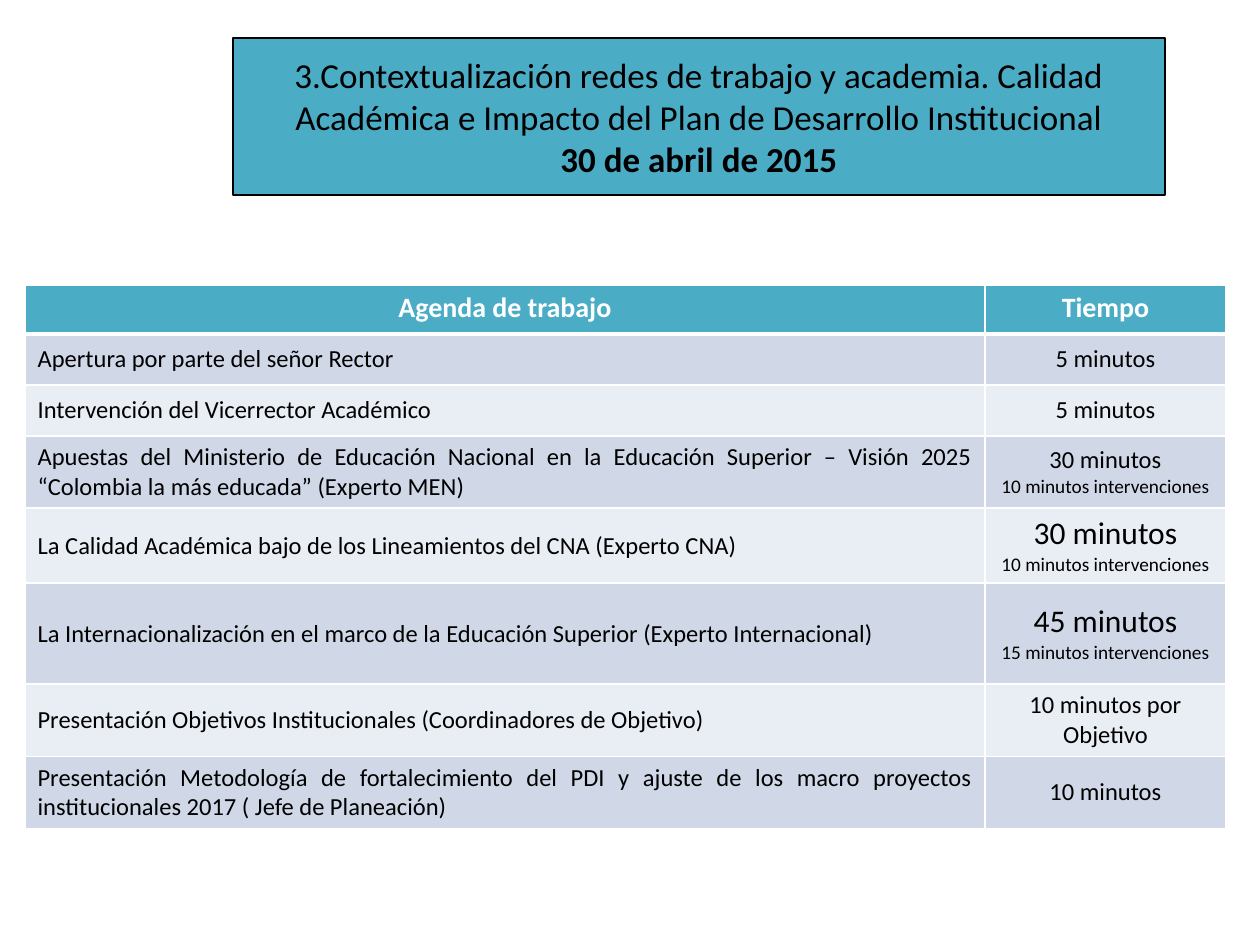
from lxml import etree
from pptx import Presentation
from pptx.dml.color import RGBColor
from pptx.enum.shapes import MSO_SHAPE
from pptx.enum.text import MSO_ANCHOR, PP_ALIGN
from pptx.oxml.ns import qn
from pptx.util import Emu, Pt

CENTER, JUSTIFY = PP_ALIGN.CENTER, PP_ALIGN.JUSTIFY
TOP, MIDDLE = MSO_ANCHOR.TOP, MSO_ANCHOR.MIDDLE
RECTANGLE = MSO_SHAPE.RECTANGLE
PX = 914400 // 126

THEME = {
    "font": "Calibri",
    "accent": "4BACC6",
    "bands": ["D0D8E8", "E9EDF4"],
    "ink": "000000",
    "paper": "FFFFFF",
    "title": 20,
    "header": 16,
    "body": 14,
    "large": 18,
    "note": 11,
}


def add_span(para, text, size, color, bold=False):
    span = para.add_run()
    span.text = text
    formats = {"name": THEME["font"], "size": Pt(size), "bold": bold}
    for name, value in formats.items():
        setattr(span.font, name, value)
    span.font.color.rgb = RGBColor.from_string(color)


def add_border(cell, side, points):
    line = etree.SubElement(cell._tc.get_or_add_tcPr(), qn(f"a:ln{side}"), w=str(Pt(points)))
    fill = etree.SubElement(line, qn("a:solidFill"))
    etree.SubElement(fill, qn("a:srgbClr"), val=THEME["paper"])


deck = Presentation()
deck.slide_width, deck.slide_height = Emu(1260 * PX), Emu(945 * PX)
page = deck.slides.add_slide(deck.slide_layouts[6])

# Title box
box = page.shapes.add_shape(RECTANGLE, *[Emu(n * PX) for n in (233, 38, 932, 157)])
box.shadow.inherit = False
box.fill.solid()
box.fill.fore_color.rgb = RGBColor.from_string(THEME["accent"])
box.line.color.rgb = RGBColor.from_string(THEME["ink"])
box.line.width = Pt(0.75)
box.text_frame.word_wrap = True
box.text_frame.vertical_anchor = MIDDLE
para = box.text_frame.paragraphs[0]
para.alignment = CENTER
add_span(
    para,
    "3.Contextualización redes de trabajo y academia. Calidad Académica "
    "e Impacto del Plan de Desarrollo Institucional",
    THEME["title"], THEME["ink"],
)
para.add_line_break()
add_span(para, "30 de abril de 2015", THEME["title"], THEME["ink"], True)

# Agenda: row height, topic, then lines of time with their sizes
agenda = [
    (49, "Agenda de trabajo", [("Tiempo", "header")]),
    (51, "Apertura por parte del señor Rector", [("5 minutos", "body")]),
    (51, "Intervención del Vicerrector Académico", [("5 minutos", "body")]),
    (72, "Apuestas del Ministerio de Educación Nacional en la Educación Superior "
         "– Visión 2025 “Colombia la más educada” (Experto MEN)",
     [("30 minutos", "body"), ("10 minutos intervenciones", "note")]),
    (75, "La Calidad Académica bajo de los Lineamientos del CNA (Experto CNA)",
     [("30 minutos", "large"), ("10 minutos intervenciones", "note")]),
    (101, "La Internacionalización en el marco de la Educación Superior (Experto Internacional)",
     [("45 minutos", "large"), ("15 minutos intervenciones", "note")]),
    (72, "Presentación Objetivos Institucionales (Coordinadores de Objetivo)",
     [("10 minutos por Objetivo", "body")]),
    (72, "Presentación Metodología de fortalecimiento del PDI y ajuste de los "
         "macro proyectos institucionales 2017 ( Jefe de Planeación)",
     [("10 minutos", "body")]),
]
widths = [960, 241]
height = sum(row[0] for row in agenda)
frame = page.shapes.add_table(
    len(agenda), len(widths), *[Emu(n * PX) for n in (25, 285, sum(widths), height)]
)
table = frame.table
table.horz_banding = False
for column, width in zip(table.columns, widths):
    column.width = Emu(width * PX)

# Table cells
for index, (row_height, topic, times) in enumerate(agenda):
    table.rows[index].height = Emu(row_height * PX)
    header = index == 0
    background = THEME["accent"] if header else THEME["bands"][(index - 1) % 2]
    color = THEME["paper"] if header else THEME["ink"]
    topic_lines = [(topic, "header" if header else "body")]
    for column, lines in enumerate((topic_lines, times)):
        cell = table.cell(index, column)
        cell.vertical_anchor = TOP if header else MIDDLE
        borders = {"L": 1, "R": 1, "T": 3 if index == 1 else 1, "B": 3 if header else 1}
        for side, points in borders.items():
            add_border(cell, side, points)
        cell.fill.solid()
        cell.fill.fore_color.rgb = RGBColor.from_string(background)
        for number, (text, size) in enumerate(lines):
            para = cell.text_frame.add_paragraph() if number else cell.text_frame.paragraphs[0]
            para.alignment = CENTER if header or column else JUSTIFY
            add_span(para, text, THEME[size], color, header)

deck.save("out.pptx")
